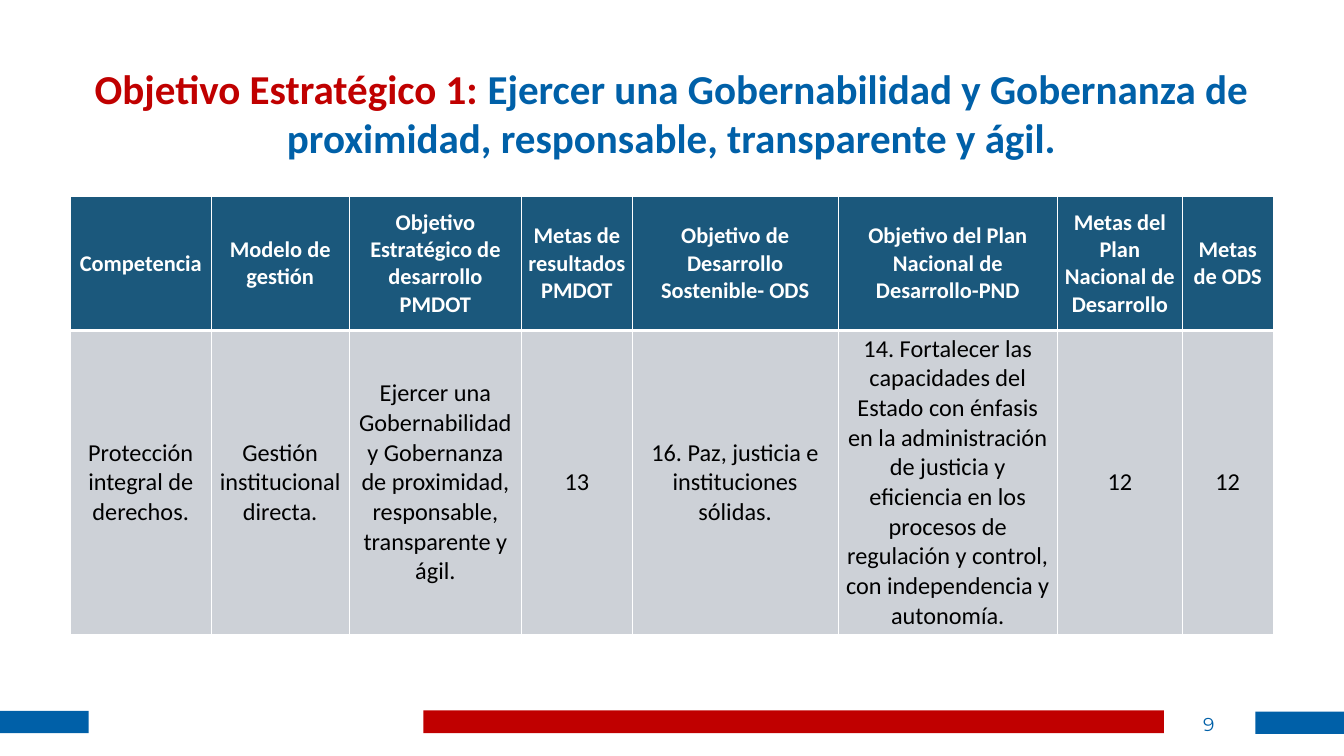
from lxml.etree import SubElement
from pptx import Presentation
from pptx.dml.color import RGBColor
from pptx.enum.shapes import MSO_SHAPE
from pptx.enum.text import MSO_ANCHOR, MSO_AUTO_SIZE, PP_ALIGN
from pptx.oxml.ns import qn
from pptx.util import Inches, Pt

COLORS = {
    "red": "C00000",
    "blue": "0060A8",
    "header": "1B587C",
    "body": "CDD1D7",
    "white": "FFFFFF",
    "black": "000000",
}

TITLE = [
    ("Objetivo Estratégico 1: ", "red"),
    ("Ejercer una Gobernabilidad y Gobernanza de proximidad, "
     "responsable, transparente y ágil.", "blue"),
]
PAGE_NUMBER = "9"

COLUMNS = [
    ("Competencia", "Protección integral de derechos.", 2.09),
    ("Modelo de gestión", "Gestión institucional directa.", 2.06),
    ("Objetivo Estratégico de desarrollo PMDOT",
     "Ejercer una Gobernabilidad y Gobernanza de proximidad, "
     "responsable, transparente y ágil.", 2.56),
    ("Metas de resultados PMDOT", "13", 1.65),
    ("Objetivo de Desarrollo Sostenible- ODS",
     "16. Paz, justicia e instituciones sólidas.", 3.06),
    ("Objetivo del Plan Nacional de Desarrollo-PND",
     "14. Fortalecer las capacidades del Estado con énfasis en la "
     "administración de justicia y eficiencia en los procesos de regulación "
     "y control, con independencia y autonomía.", 3.27),
    ("Metas del Plan Nacional de Desarrollo", "12", 1.85),
    ("Metas de ODS", "12", 1.36),
]
ROWS = [
    {"height": 2, "fill": "header", "color": "white", "size": 24, "bold": True, "bottom": 3},
    {"height": 4.35, "fill": "body", "color": "black", "size": 26, "bold": False, "bottom": 1},
]
FOOTER_BARS = [
    ("red", 6.3, 10.57, 11.02, 0.34),
    ("blue", 0, 10.58, 1.32, 0.33),
    ("blue", 18.68, 10.59, 1.32, 0.33),
]


def rgb(name):
    return RGBColor.from_string(COLORS[name])


def style_font(font, face, size, color, bold=False):
    font.name, font.size, font.bold = face, Pt(size), bold
    font.color.rgb = rgb(color)


def format_frame(frame):
    frame.word_wrap = True
    frame.auto_size = MSO_AUTO_SIZE.NONE
    frame.vertical_anchor = MSO_ANCHOR.MIDDLE
    frame.margin_left = frame.margin_right = Inches(0.18)
    frame.margin_top = frame.margin_bottom = Inches(0.09)
    frame.paragraphs[0].alignment = PP_ALIGN.CENTER
    return frame.paragraphs[0]


def add_footer_bar(slide, color, *box):
    bar = slide.shapes.add_shape(MSO_SHAPE.RECTANGLE, *map(Inches, box))
    bar.shadow.inherit = False
    bar.fill.solid()
    bar.fill.fore_color.rgb = rgb(color)
    bar.line.fill.background()


def set_borders(cell, top, bottom):
    properties = cell._tc.get_or_add_tcPr()
    widths = {"lnL": 1, "lnR": 1, "lnT": top, "lnB": bottom}
    for index, (side, width) in enumerate(widths.items()):
        border = SubElement(properties, qn(f"a:{side}"), w=str(Pt(width)))
        fill = SubElement(border, qn("a:solidFill"))
        SubElement(fill, qn("a:srgbClr"), val=COLORS["white"])
        properties.insert(index, border)


def add_goals_table(slide):
    widths = [width for _, _, width in COLUMNS]
    height = sum(row["height"] for row in ROWS)
    goals = slide.shapes.add_table(
        len(ROWS), len(COLUMNS),
        Inches(1.05), Inches(2.92), Inches(sum(widths)), Inches(height)).table
    for column, width in zip(goals.columns, widths):
        column.width = Inches(width)
    top = 1
    for r, row in enumerate(ROWS):
        goals.rows[r].height = Inches(row["height"])
        for c, column in enumerate(COLUMNS):
            cell = goals.cell(r, c)
            cell.text = column[r]
            cell.vertical_anchor = MSO_ANCHOR.MIDDLE
            cell.fill.solid()
            cell.fill.fore_color.rgb = rgb(row["fill"])
            set_borders(cell, top, row["bottom"])
            paragraph = cell.text_frame.paragraphs[0]
            paragraph.alignment = PP_ALIGN.CENTER
            style_font(paragraph.font, "Calibri", row["size"], row["color"], row["bold"])
        top = row["bottom"]


def main():
    """Build the strategic objective slide."""
    deck = Presentation()
    deck.slide_width, deck.slide_height = Inches(20), Inches(11.25)
    slide = deck.slides.add_slide(deck.slide_layouts[5])

    for bar in FOOTER_BARS:
        add_footer_bar(slide, *bar)

    title = slide.shapes.title
    title.left, title.top = Inches(0), Inches(1)
    title.width, title.height = Inches(20), Inches(1.36)
    heading = format_frame(title.text_frame)
    for text, color in TITLE:
        run = heading.add_run()
        run.text = text
        style_font(run.font, "Calibri", 44, color, True)

    add_goals_table(slide)

    page = slide.shapes.add_textbox(Inches(17.52), Inches(10.47), Inches(0.94), Inches(0.6))
    number = format_frame(page.text_frame)
    number.text = PAGE_NUMBER
    style_font(number.font, "Montserrat", 20, "blue")

    deck.save("out.pptx")


if __name__ == "__main__":
    main()
